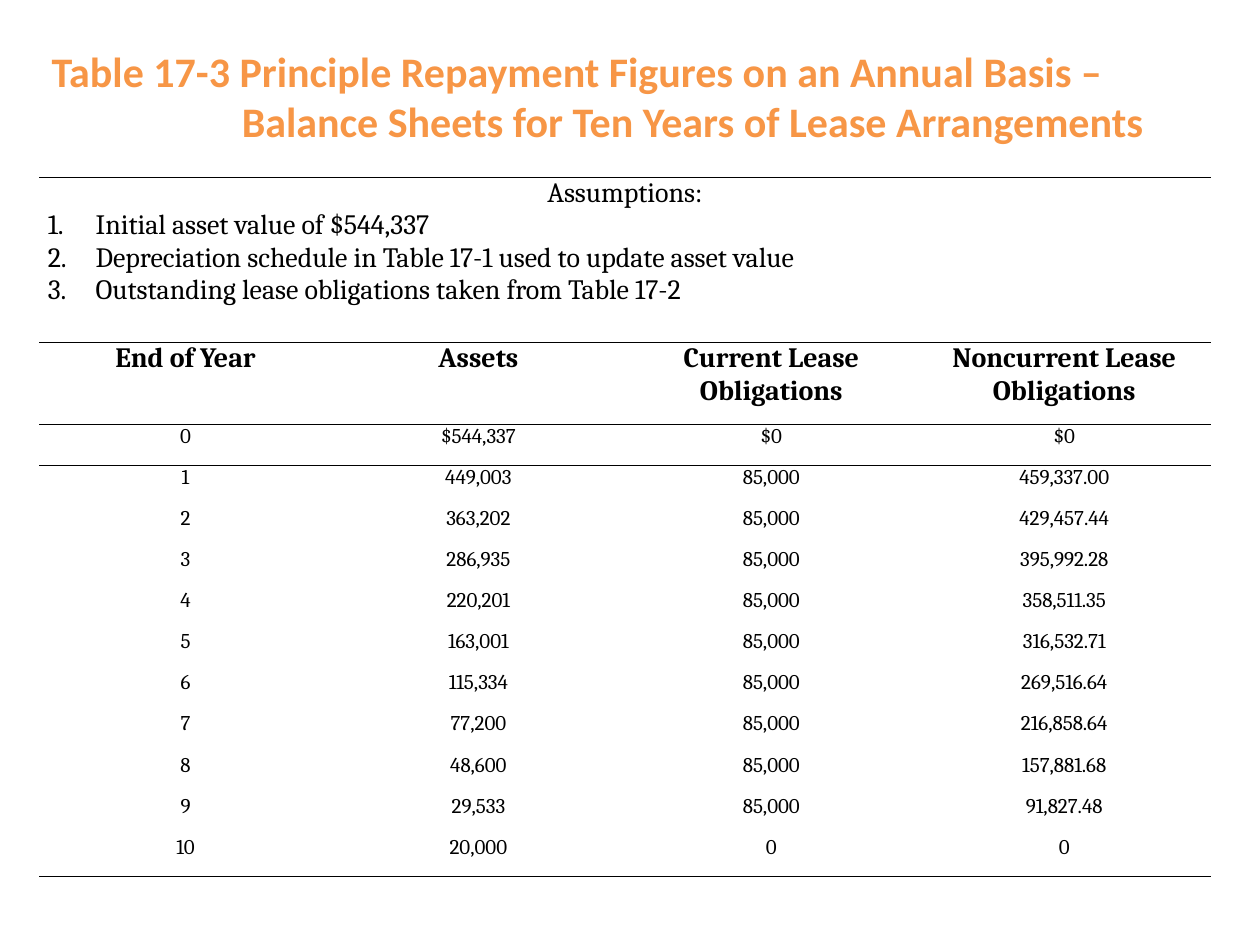
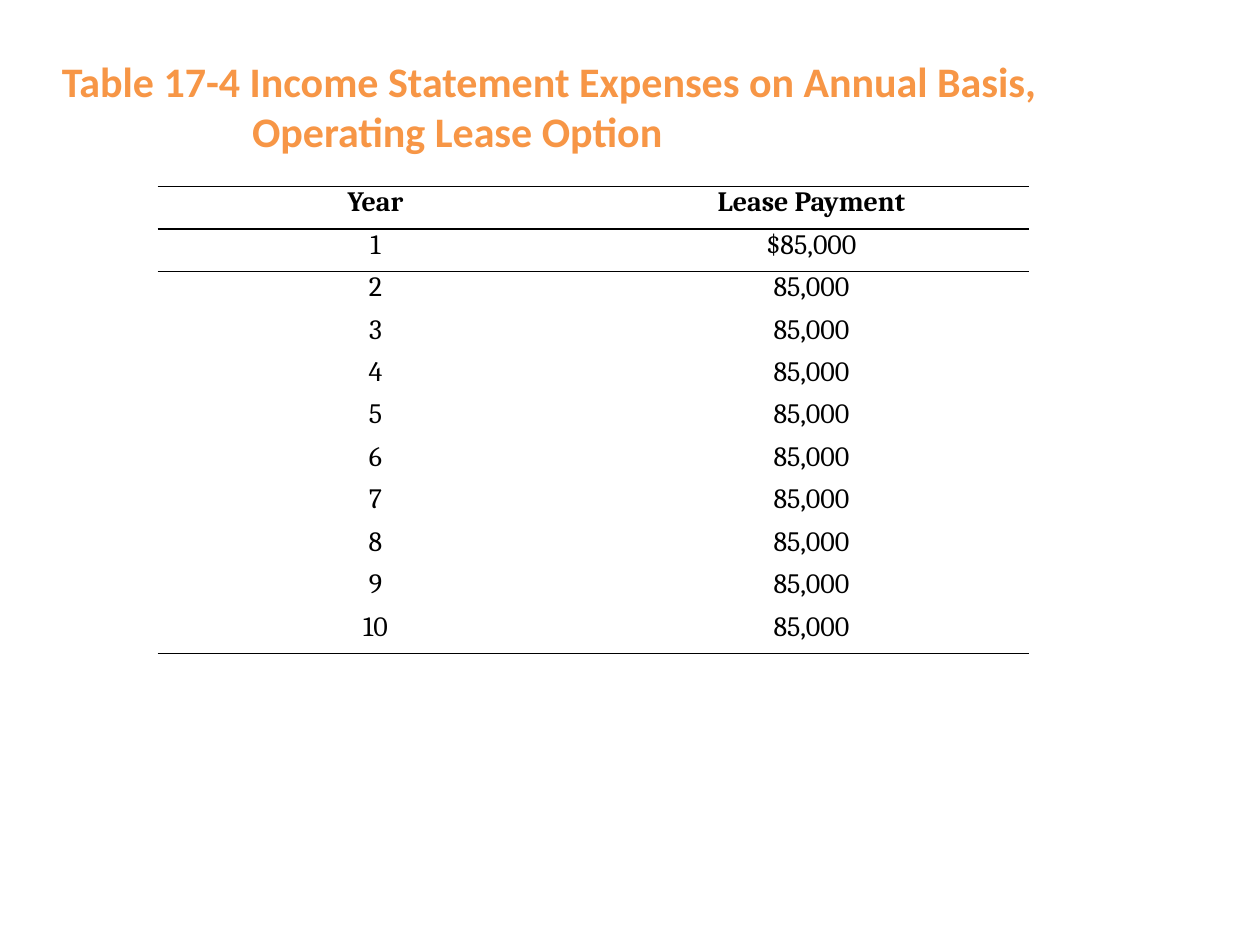
from lxml import etree
from pptx import Presentation
from pptx.dml.color import RGBColor
from pptx.enum.text import MSO_ANCHOR, MSO_AUTO_SIZE, PP_ALIGN
from pptx.oxml.ns import qn
from pptx.util import Inches, Pt

ORANGE = RGBColor(0xF7, 0x96, 0x46)
BLACK = RGBColor(0, 0, 0)
TITLE_FONT = "Calibri"
TABLE_FONT = "Cambria"
TOP = MSO_ANCHOR.TOP
GROW = MSO_AUTO_SIZE.SHAPE_TO_FIT_TEXT
LEFT = PP_ALIGN.LEFT
CENTER = PP_ALIGN.CENTER
TITLE_ONLY = 5
NO_STYLE_NO_GRID = "{2D5ABB26-0587-4C30-8999-92F81FD0307C}"
TITLE_INDENT = Inches(1.51)
NUMBER_INDENT = Inches(0.38)
CELL_MARGIN = Inches(0.07)
RULE_WIDTH = Pt(1)

ASSUMPTIONS = [
    "Initial asset value of $544,337",
    "Depreciation schedule in Table 17-1 used to update asset value",
    "Outstanding lease obligations taken from Table 17-2",
]
BALANCE_HEADINGS = ["End of Year", "Assets", "Current Lease Obligations",
                    "Noncurrent Lease Obligations"]
BALANCES = [
    ("0", "$544,337", "$0", "$0"),
    ("1", "449,003", "85,000", "459,337.00"),
    ("2", "363,202", "85,000", "429,457.44"),
    ("3", "286,935", "85,000", "395,992.28"),
    ("4", "220,201", "85,000", "358,511.35"),
    ("5", "163,001", "85,000", "316,532.71"),
    ("6", "115,334", "85,000", "269,516.64"),
    ("7", "77,200", "85,000", "216,858.64"),
    ("8", "48,600", "85,000", "157,881.68"),
    ("9", "29,533", "85,000", "91,827.48"),
    ("10", "20,000", "0", "0"),
]
PAYMENT_HEADINGS = ["Year", "Lease Payment"]
PAYMENTS = [(str(year), "$85,000" if year == 1 else "85,000")
            for year in range(1, 11)]


def style_paragraph(paragraph, font_name, size, color, bold, alignment):
    """Set the font and alignment of a whole paragraph."""
    paragraph.alignment = alignment
    paragraph.font.name = font_name
    paragraph.font.size = Pt(size)
    paragraph.font.color.rgb = color
    paragraph.font.bold = bold


def indent_paragraph(paragraph, margin, first_line):
    """Set the left margin and first-line indent, and return the properties."""
    properties = paragraph._p.get_or_add_pPr()
    properties.set("marL", str(margin))
    properties.set("indent", str(first_line))
    return properties


def add_titled_slide(presentation, lines, box):
    """Add a slide whose two-line title has an indented second line."""
    slide = presentation.slides.add_slide(
        presentation.slide_layouts[TITLE_ONLY])
    title = slide.shapes.title
    title.left, title.top, title.width, title.height = map(Inches, box)
    frame = title.text_frame
    frame.text = "\n".join(lines)
    frame.word_wrap = True
    frame.auto_size = GROW
    frame.vertical_anchor = TOP
    for paragraph in frame.paragraphs:
        style_paragraph(paragraph, TITLE_FONT, 24, ORANGE, True, LEFT)
    indent_paragraph(frame.paragraphs[1], TITLE_INDENT, 0)
    return slide


def add_plain_table(slide, row_heights, column_count, box):
    """Add a table without style, with equal columns and the given row heights."""
    left, top, width, height = map(Inches, box)
    frame = slide.shapes.add_table(
        len(row_heights), column_count, left, top, width, height)
    for style in frame.element.iter(qn("a:tableStyleId")):
        style.text = NO_STYLE_NO_GRID
    table = frame.table
    table.first_row = table.horz_banding = False
    for row, row_height in zip(table.rows, row_heights):
        row.height = Inches(row_height)
    for column in table.columns:
        column.width = width // column_count
    for cell in table.iter_cells():
        cell.margin_left = cell.margin_right = CELL_MARGIN
        cell.margin_top = cell.margin_bottom = 0
        cell.fill.background()
    return table


def fill_row(table, row_index, texts, size, bold=False):
    """Write centred texts into one row."""
    for cell, text in zip(table.rows[row_index].cells, texts):
        cell.text = text
        style_paragraph(cell.text_frame.paragraphs[0], TABLE_FONT, size,
                        BLACK, bold, CENTER)


def add_rule(table, row_index, *edges):
    """Draw black rules along the named edges of a row."""
    for cell in table.rows[row_index].cells:
        properties = cell._tc.get_or_add_tcPr()
        for position, edge in enumerate(edges):
            line = etree.Element(qn(f"a:{edge}"), w=str(RULE_WIDTH))
            fill = etree.SubElement(line, qn("a:solidFill"))
            etree.SubElement(fill, qn("a:srgbClr"), val=str(BLACK))
            properties.insert(position, line)


def fill_table(table, heading_row, headings, rows, body_size):
    """Write headings and rows, ruling off the headings and the last row."""
    fill_row(table, heading_row, headings, 16, True)
    for row_index, texts in enumerate(rows, heading_row + 1):
        fill_row(table, row_index, texts, body_size)
    add_rule(table, heading_row, "lnT", "lnB")
    add_rule(table, heading_row + 1, "lnT")
    add_rule(table, heading_row + len(rows), "lnB")


def fill_assumptions(table):
    """Merge the first row and write the numbered assumptions."""
    add_rule(table, 0, "lnT", "lnB")
    cell = table.cell(0, 0)
    cell.merge(table.cell(0, len(table.columns) - 1))
    cell.text = "\n".join(["Assumptions:"] + ASSUMPTIONS)
    heading, *items = cell.text_frame.paragraphs
    style_paragraph(heading, TABLE_FONT, 16, BLACK, False, CENTER)
    for item in items:
        properties = indent_paragraph(item, NUMBER_INDENT, -NUMBER_INDENT)
        etree.SubElement(properties, qn("a:buAutoNum"), type="arabicPeriod")
        style_paragraph(item, TABLE_FONT, 16, BLACK, False, LEFT)


def add_balance_slide(presentation):
    """Add the balance sheets for ten years."""
    slide = add_titled_slide(
        presentation,
        ["Table 17-3 Principle Repayment Figures on an Annual Basis –",
         "Balance Sheets for Ten Years of Lease Arrangements"],
        (0.31, 0.31, 9.38, 0.91))
    height, assumptions_height, heading_height = 5.55, 1.31, 0.65
    body_height = height - assumptions_height - heading_height
    row_heights = [assumptions_height, heading_height]
    row_heights += [body_height / len(BALANCES)] * len(BALANCES)
    table = add_plain_table(slide, row_heights, len(BALANCE_HEADINGS),
                            (0.31, 1.41, 9.3, height))
    fill_assumptions(table)
    fill_table(table, 1, BALANCE_HEADINGS, BALANCES, 12)


def add_payment_slide(presentation):
    """Add the yearly lease payments."""
    slide = add_titled_slide(
        presentation,
        ["Table 17-4 Income Statement Expenses on Annual Basis,",
         "Operating Lease Option"],
        (0.39, 0.39, 9.22, 0.91))
    height, row_count = 3.71, len(PAYMENTS) + 1
    table = add_plain_table(slide, [height / row_count] * row_count,
                            len(PAYMENT_HEADINGS), (1.25, 1.48, 6.92, height))
    fill_table(table, 0, PAYMENT_HEADINGS, PAYMENTS, 16)


def main():
    """Build and save the presentation."""
    presentation = Presentation()
    presentation.slide_width = Inches(10)
    presentation.slide_height = Inches(7.5)
    add_balance_slide(presentation)
    add_payment_slide(presentation)
    presentation.save("out.pptx")


if __name__ == "__main__":
    main()
